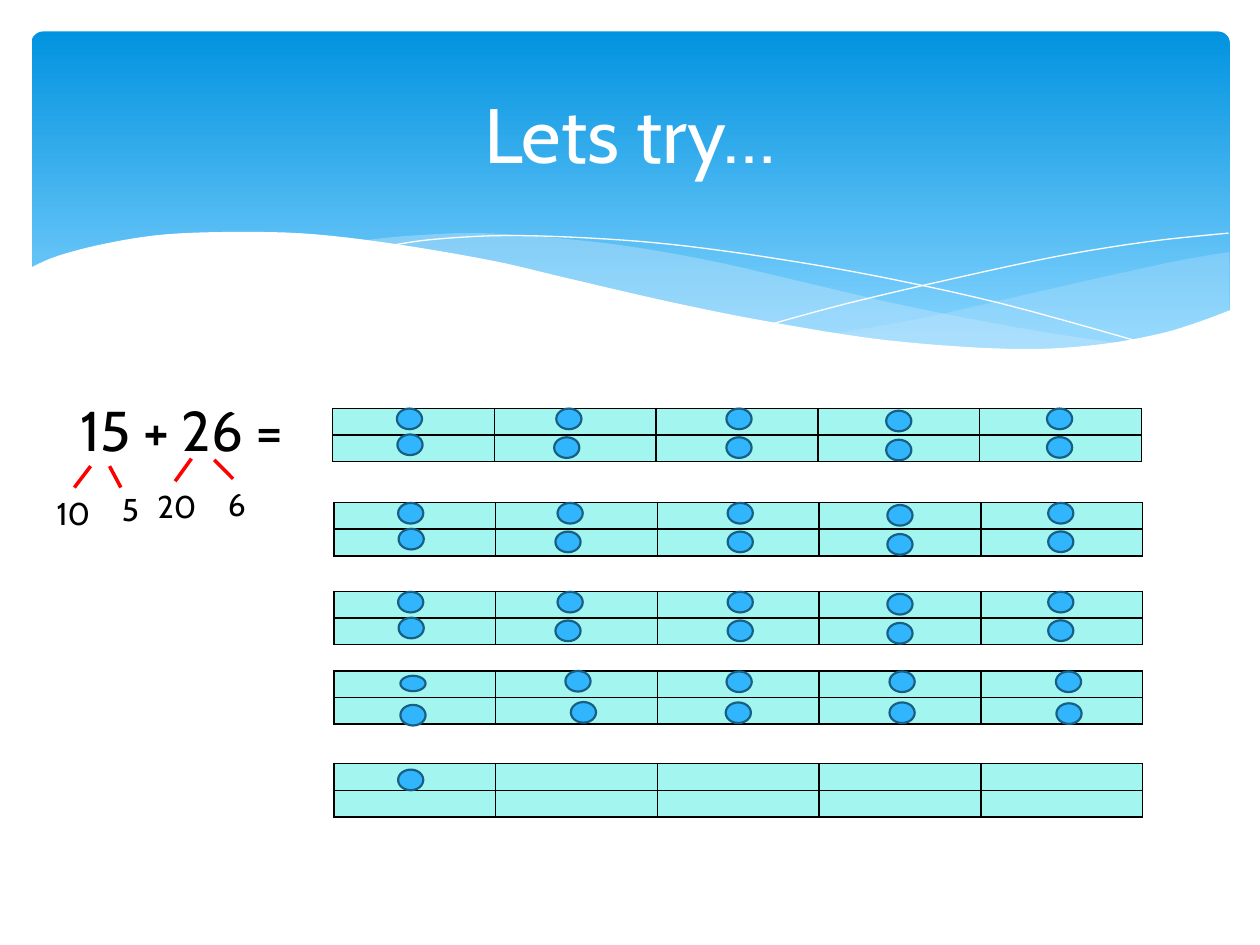
from dataclasses import dataclass

from lxml import etree
from pptx import Presentation
from pptx.dml.color import RGBColor
from pptx.enum.shapes import MSO_CONNECTOR, MSO_SHAPE
from pptx.enum.text import MSO_ANCHOR, PP_ALIGN
from pptx.oxml.ns import qn
from pptx.util import Pt

ROUND, DOT = MSO_SHAPE.ROUNDED_RECTANGLE, MSO_SHAPE.FLOWCHART_CONNECTOR
LINE = MSO_CONNECTOR.STRAIGHT
MIDDLE, CENTER = MSO_ANCHOR.MIDDLE, PP_ALIGN.CENTER
FONT = "Cabin"
COLS, ROWS, CELL_W, CELL_H = 5, 2, 92.45, 15.2

Point = tuple[float, float]


@dataclass
class Dot:
    """A counter, placed from the corner of its frame."""
    x: float
    y: float
    h: float = 11.8


@dataclass
class Frame:
    x: float
    y: float
    dots: list[Dot]


@dataclass
class Label:
    text: str
    x: float
    y: float
    w: float
    h: float
    size: int = 18


@dataclass
class Branch:
    start: Point
    end: Point


FULL = [Dot(36.7, 0.2), Dot(127.8, 0.2), Dot(225, 0.2), Dot(316.3, 1.4), Dot(408.2, 0.2),
        Dot(37, 15), Dot(126.6, 16.6), Dot(225, 16.6), Dot(316.3, 18), Dot(408.2, 16.5)]
LOOSE = [Dot(38, 2.8, 8.8), Dot(132.3, 0), Dot(224.4, 0.3), Dot(317.5, 0.3), Dot(412.6, 0.3),
         Dot(38, 19.4), Dot(135.4, 17.8), Dot(223.9, 18), Dot(317.5, 18), Dot(412.9, 18.5)]
FRAMES = [
    Frame(190.1, 233.3, FULL),
    Frame(190.8, 287.2, FULL),
    Frame(190.8, 338, FULL),
    Frame(190.8, 383.4, LOOSE),
    Frame(190.8, 436.4, [Dot(36.7, 3.4)]),
]
LABELS = [
    Label("15 + 26 =", 38.9, 222.5, 345.6, 46, 32),
    Label("10", 25.2, 278.6, 39.6, 29),
    Label("5", 62.6, 276.5, 20.2, 29),
    Label("20", 82.8, 275, 39.6, 29),
    Label("6", 123.1, 273.6, 20.2, 29),
]
BRANCHES = [
    Branch((51.8, 266.4), (42.5, 278.6)),
    Branch((62.6, 266.4), (69.1, 278.6)),
    Branch((109.4, 262.1), (100.1, 275)),
    Branch((122.4, 262.8), (133.2, 273.6)),
]

# Knots of the wave curves
HILL = [(16.6, 153.4), (33.1, 146.2), (61.2, 139), (95, 133.9), (139, 132.5), (180, 133.9),
        (227.5, 139.7), (281.5, 149), (321.8, 158.4), (380.9, 172.1), (434.2, 182.9),
        (495.4, 193), (547.9, 198), (592.6, 199.4), (630, 196.6), (662.4, 190.8),
        (684, 184.3), (703.4, 177.1)]
EAST_TOP = [(702.5, 144), (673.2, 149), (619.9, 160.6), (560.9, 174.2), (524.9, 182.2),
            (475.9, 190.8)]
EAST_LOW = [(475.9, 190.8), (507.6, 195.1), (545, 198.7), (586.1, 200.2), (621.4, 198),
            (651.6, 193.7), (678.2, 186.5), (702.5, 177.8)]
MID_TOP = [(643, 196.6), (602.6, 190.8), (558, 182.9), (508.3, 172.8), (452.9, 159.8),
           (409.7, 149.8), (361.4, 141.1), (318.2, 136.1), (273.6, 133.2), (236.2, 134.6),
           (205.9, 137.5)]
MID_LOW = [(205.9, 137.5), (246.2, 143.3), (290.9, 151.9), (323.3, 159.8), (381.6, 172.8),
           (432.7, 183.6), (478.8, 191.5), (519.8, 197.3), (565.2, 200.2), (603.4, 200.2),
           (643, 196.6)]
FALL = [(222.5, 140.4), (247.7, 136.8), (288.7, 134.6), (337.7, 136.1), (383.8, 139.7),
        (437.8, 146.9), (500.4, 157.7), (572.4, 173.5), (653, 195.8)]
RISE = [(441.4, 185), (483.8, 173.5), (538.6, 160.6), (601.9, 146.9), (655.2, 138.2),
        (702, 133.2)]


def color(code: str) -> RGBColor:
    return RGBColor.from_string(code)


def paint(shape, fill: str | None = None, line: str | None = None, width: float = 0) -> None:
    shape.shadow.inherit = False
    for part, code in ((shape.fill, fill), (shape.line.fill, line)):
        if code:
            part.solid()
            part.fore_color.rgb = color(code)
        else:
            part.background()
    if line:
        shape.line.width = Pt(width)


def smooth(knots: list[Point], steps: int = 5) -> list[Point]:
    """Catmull-Rom curve through the knots."""
    ends = [knots[0], *knots, knots[-1]]
    curve = [knots[0]]
    for a, b, c, d in zip(ends, ends[1:], ends[2:], ends[3:]):
        for step in range(1, steps + 1):
            t = step / steps
            curve.append(tuple(
                q + t / 2 * (r - p + t * (2 * p - 5 * q + 4 * r - s + t * (3 * (q - r) + s - p)))
                for p, q, r, s in zip(a, b, c, d)))
    return curve


def outline(shapes, points: list[Point], close: bool = True):
    spots = [(Pt(x), Pt(y)) for x, y in points]
    pen = shapes.build_freeform(*spots[0])
    pen.add_line_segments(spots[1:], close=close)
    return pen.convert_to_shape()


def draw_banner(shapes) -> None:
    sky = shapes.add_shape(ROUND, Pt(18), Pt(18), Pt(684.7), Pt(194.4))
    sky.adjustments[0] = 0.034
    paint(sky)
    sky.fill.gradient()
    sky.fill.gradient_angle = 270
    for stop, spot, code in zip(sky.fill.gradient_stops, (0, 0.9), ("0293E0", "83D3FE")):
        stop.position, stop.color.rgb = spot, color(code)
    for top, low, alpha in ((EAST_TOP, EAST_LOW, 29), (MID_TOP, MID_LOW, 40)):
        veil = outline(shapes, smooth(top) + smooth(low)[1:])
        paint(veil, "C6E7FC")
        tint = veil.element.spPr.find(qn("a:solidFill"))[0]
        etree.SubElement(tint, qn("a:alpha"), val=str(alpha * 1000))
    for knots in (FALL, RISE):
        paint(outline(shapes, smooth(knots), close=False), line="FFFFFF")
    paint(outline(shapes, smooth(HILL) + [(703.4, 236.9), (16.6, 236.9)]), "FFFFFF")


def style(frame, text: str, size: int, code: str) -> None:
    frame.text = text
    font = frame.paragraphs[0].runs[0].font
    for name, value in {"name": FONT, "size": Pt(size), "bold": False}.items():
        setattr(font, name, value)
    font.color.rgb = color(code)


def draw_title(title) -> None:
    box = {"left": Pt(36), "top": Pt(26.6), "width": Pt(648), "height": Pt(98.6)}
    for name, value in box.items():
        setattr(title, name, value)
    style(title.text_frame, "Lets try…", 44, "FFFFFF")
    title.text_frame.vertical_anchor = MIDDLE
    title.text_frame.paragraphs[0].alignment = CENTER
    title.element.getparent().append(title.element)  # bring in front of the banner


def draw_label(shapes, label: Label) -> None:
    box = shapes.add_textbox(Pt(label.x), Pt(label.y), Pt(label.w), Pt(label.h))
    box.text_frame.word_wrap = True
    style(box.text_frame, label.text, label.size, "000000")


def draw_branch(shapes, branch: Branch) -> None:
    line = shapes.add_connector(LINE, *(Pt(v) for v in branch.start + branch.end))
    line.line.color.rgb = color("FF0000")
    line.line.width = Pt(2)
    etree.SubElement(line.element.spPr, qn("a:effectLst"))


def format_cell(cell) -> None:
    for side in ("left", "right", "top", "bottom"):
        setattr(cell, f"margin_{side}", 0)
    props = cell._tc.get_or_add_tcPr()
    for tag in ("a:lnL", "a:lnR", "a:lnT", "a:lnB"):
        edge = etree.SubElement(props, qn(tag), w=str(Pt(1)))
        fill = etree.SubElement(edge, qn("a:solidFill"))
        etree.SubElement(fill, qn("a:srgbClr"), val="000000")
    cell.fill.solid()
    cell.fill.fore_color.rgb = color("A3F5EF")
    # A small empty line keeps the row low
    etree.SubElement(cell.text_frame.paragraphs[0]._p, qn("a:endParaRPr"), sz="800")


def draw_frame(shapes, frame: Frame) -> None:
    table = shapes.add_table(ROWS, COLS, Pt(frame.x), Pt(frame.y),
                             Pt(COLS * CELL_W), Pt(ROWS * CELL_H)).table
    for cell in table.iter_cells():
        format_cell(cell)
    for dot in frame.dots:
        disc = shapes.add_shape(DOT, Pt(frame.x + dot.x), Pt(frame.y + dot.y), Pt(14.4), Pt(dot.h))
        paint(disc, "31B6FD", "195F84", 1.25)


def main() -> None:
    deck = Presentation()
    deck.slide_width, deck.slide_height = Pt(720), Pt(540)
    slide = deck.slides.add_slide(deck.slide_layouts[5])
    shapes = slide.shapes
    draw_banner(shapes)
    draw_title(shapes.title)
    for draw, items in ((draw_label, LABELS), (draw_branch, BRANCHES), (draw_frame, FRAMES)):
        for item in items:
            draw(shapes, item)
    deck.save("out.pptx")


if __name__ == "__main__":
    main()
